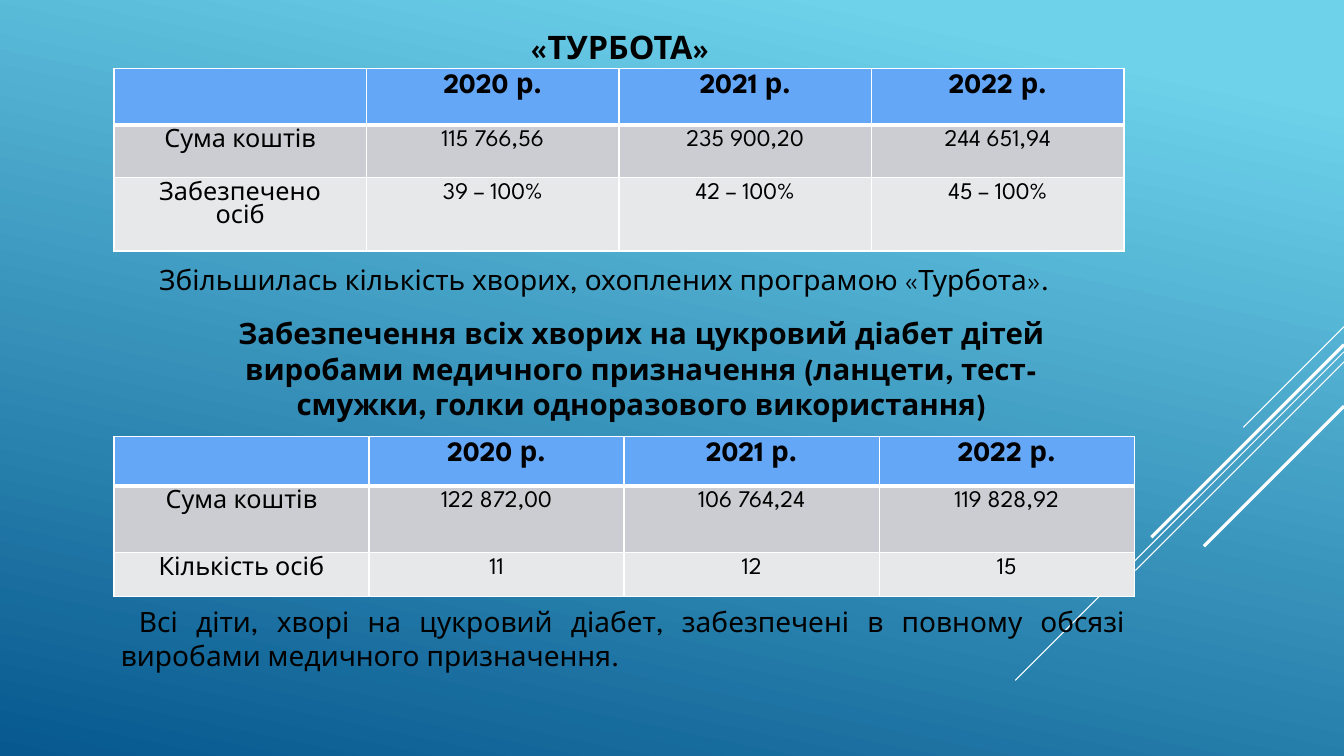
from lxml import etree
from pptx import Presentation
from pptx.dml.color import RGBColor
from pptx.enum.shapes import MSO_CONNECTOR
from pptx.enum.text import MSO_ANCHOR, PP_ALIGN
from pptx.oxml.ns import qn
from pptx.util import Inches, Pt

STRAIGHT = MSO_CONNECTOR.STRAIGHT
MIDDLE, TOP = MSO_ANCHOR.MIDDLE, MSO_ANCHOR.TOP
CENTER, JUSTIFY = PP_ALIGN.CENTER, PP_ALIGN.JUSTIFY

THEME = {
    "font": "League Spartan",
    "ink": "000000", "line": "FFFFFF",
    "sky": "6ED2EB", "deep": "06588E",
    "rows": ["64A7F7", "CCCDD2", "E7E8EA"],
    "title": 23.1, "heading": 21, "body": 20, "label": 18, "value": 17,
}

TITLE = "«ТУРБОТА»"
HEADING = ("Забезпечення всіх хворих на цукровий діабет дітей виробами медичного "
           "призначення (ланцети, тест-смужки, голки одноразового використання)")
CARE_NOTE = "Збільшилась кількість хворих, охоплених програмою «Турбота»."
CHILDREN_NOTE = ("Всі діти, хворі на цукровий діабет, забезпечені в повному обсязі "
                 "виробами медичного призначення.")
YEARS = ["", "2020 р.", "2021 р.", "2022 р."]
TABLES = [
    {"top": 0.68, "column": 2.505, "heights": [0.56, 0.52, 0.73], "rows": [
        YEARS,
        ["Сума коштів", "115 766,56", "235 900,20", "244 651,94"],
        ["Забезпечено\nосіб", "39 – 100%", "42 – 100%", "45 – 100%"]]},
    {"top": 4.33, "column": 2.53, "heights": [0.49, 0.66, 0.44], "rows": [
        YEARS,
        ["Сума коштів", "122 872,00", "106 764,24", "119 828,92"],
        ["Кількість осіб", "11", "12", "15"]]},
]
TABLE_LEFT = 1.13
PAGE_WIDTH, PAGE_HEIGHT = 13.33, 7.5
# start height on the right edge, run down to the left, line width
DIAGONALS = [(3.24, 1.0, 0.75), (3.49, 3.26, 0.75), (3.59, 2.07, 0.75),
             (3.42, 1.91, 2.25), (4.03, 1.39, 2.25)]


def write(frame, text, size, bold=False, align=CENTER, indent=0):
    for index, line in enumerate(text.split("\n")):
        para = frame.paragraphs[0] if index == 0 else frame.add_paragraph()
        para.alignment = align
        if indent:
            para._p.get_or_add_pPr().set("indent", str(Inches(indent)))
        span = para.add_run()
        span.text = line
        span.font.name = THEME["font"]
        span.font.size = Pt(size)
        span.font.bold = bold
        span.font.color.rgb = RGBColor.from_string(THEME["ink"])


def add_text(page, text, left, top, width, height, **style):
    box = page.shapes.add_textbox(Inches(left), Inches(top), Inches(width), Inches(height))
    box.text_frame.word_wrap = True
    write(box.text_frame, text, **style)


def paint_background(page):
    fill = page.background.fill
    fill.gradient()
    fill.gradient_angle = 258
    for stop, color, position in zip(fill.gradient_stops,
                                     (THEME["sky"], THEME["deep"]), (0.1, 1)):
        stop.color.rgb = RGBColor.from_string(color)
        stop.position = position


def add_diagonal(page, start, run, width):
    line = page.shapes.add_connector(
        STRAIGHT, Inches(PAGE_WIDTH), Inches(start),
        Inches(PAGE_WIDTH - run), Inches(start + run))
    line.line.color.rgb = RGBColor.from_string(THEME["line"])
    line.line.width = Pt(width)
    etree.SubElement(line._element.spPr, qn("a:effectLst"))


def set_border(cell, side, width):
    border = etree.SubElement(cell._tc.get_or_add_tcPr(), qn("a:ln" + side), w=str(Pt(width)))
    fill = etree.SubElement(border, qn("a:solidFill"))
    etree.SubElement(fill, qn("a:srgbClr"), val=THEME["line"])


def add_data_table(page, top, column, heights, rows):
    count = len(YEARS)
    table = page.shapes.add_table(
        len(rows), count, Inches(TABLE_LEFT), Inches(top),
        Inches(column * count), Inches(sum(heights))).table
    for table_column in table.columns:
        table_column.width = Inches(column)
    for r, (height, values) in enumerate(zip(heights, rows)):
        table.rows[r].height = Inches(height)
        for c, value in enumerate(values):
            cell = table.cell(r, c)
            for side in "LRTB":
                header_rule = (r, side) in ((0, "B"), (1, "T"))
                set_border(cell, side, 3 if header_rule else 1)
            cell.fill.solid()
            cell.fill.fore_color.rgb = RGBColor.from_string(THEME["rows"][r])
            cell.vertical_anchor = TOP
            size = THEME["body"] if r == 0 else THEME["value"] if c else THEME["label"]
            if value:
                write(cell.text_frame, value, size, bold=r == 0)


def main():
    deck = Presentation()
    deck.slide_width, deck.slide_height = Inches(PAGE_WIDTH), Inches(PAGE_HEIGHT)
    page = deck.slides.add_slide(deck.slide_layouts[5])
    paint_background(page)
    for diagonal in DIAGONALS:
        add_diagonal(page, *diagonal)

    title = page.shapes.title
    title.left, title.top = Inches(0.96), Inches(0.24)
    title.width, title.height = Inches(9.11), Inches(0.44)
    title.text_frame.vertical_anchor = MIDDLE
    title.text_frame.margin_left = Inches(1.37)
    write(title.text_frame, TITLE, THEME["title"], bold=True)

    for content in TABLES:
        add_data_table(page, **content)
    add_text(page, CARE_NOTE, 1.13, 2.56, 10.15, 0.44,
             size=THEME["body"], align=JUSTIFY, indent=0.35)
    add_text(page, HEADING, 1.91, 3.08, 8.9, 1.16, size=THEME["heading"], bold=True)
    add_text(page, CHILDREN_NOTE, 1.1, 5.95, 10.15, 0.77,
             size=THEME["body"], align=JUSTIFY, indent=0.18)
    deck.save("out.pptx")


if __name__ == "__main__":
    main()
